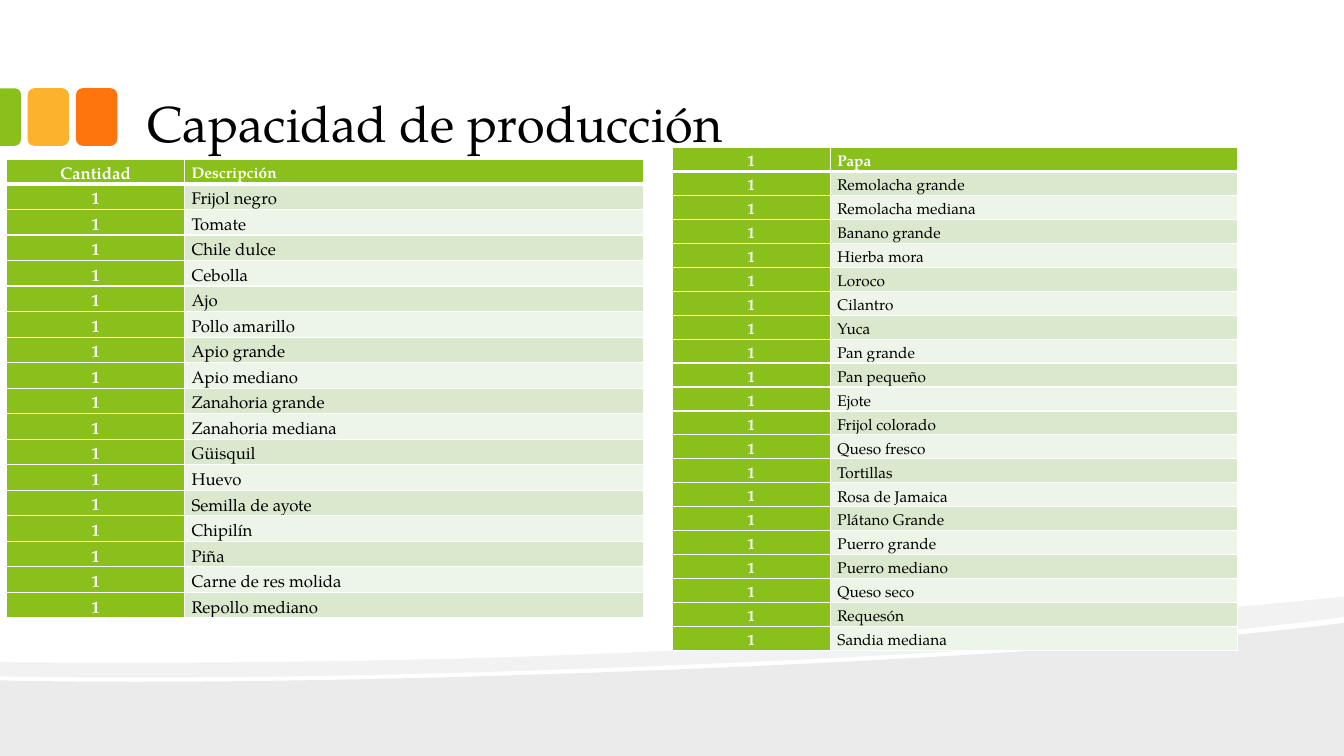
from dataclasses import dataclass

from lxml.etree import SubElement
from pptx import Presentation
from pptx.dml.color import RGBColor
from pptx.enum.shapes import MSO_SHAPE as Shape
from pptx.enum.text import MSO_ANCHOR as Anchor, MSO_AUTO_SIZE as AutoSize, PP_ALIGN as Align
from pptx.oxml.ns import qn
from pptx.util import Emu, Inches, Pt

WIDTH, HEIGHT = Inches(13.33), Inches(7.5)
FONT = "TeX Gyre Pagella"
GREEN, YELLOW, ORANGE = "89C01C", "FCB22C", "FE750E"
WHITE, BLACK = "FFFFFF", "000000"
BANDS = ("DAE8CD", "EDF4E8")
Point = tuple[float, float]


# Lengths are percentages of the slide's width and height
def across(share: float) -> Emu:
    return Emu(round(WIDTH * share / 100))


def down(share: float) -> Emu:
    return Emu(round(HEIGHT * share / 100))


@dataclass
class Tile:
    left: float
    top: float
    width: float
    height: float
    color: str
    kind: Shape = Shape.ROUNDED_RECTANGLE
    rotation: int = 0


@dataclass
class Wave:
    start: Point
    segments: list[tuple[Point, ...]]  # one point is a line, three are a Bézier curve
    opacity: int


@dataclass
class ProductTable:
    left: float
    top: float
    columns: tuple[float, float]
    row: float
    height: float
    header: tuple[str, str]
    header_sizes: tuple[int, int]
    size: int
    products: list[str]


TILES = [
    Tile(5.65, 11.67, 3.08, 7.63, ORANGE),
    Tile(2.05, 11.67, 3.08, 7.63, YELLOW),
    Tile(-1.37, 14.08, 4.28, 2.8, GREEN, Shape.ROUND_2_SAME_RECTANGLE, 90),
]

WAVES = [
    Wave((100, 82.4), [((100, 100),), ((0, 100),), ((0, 90),),
                       ((26.41, 91.07), (78.17, 87.33), (100, 82.4))], 8),
    Wave((100, 78.93), [((100, 81.6),),
                        ((94.15, 83.07), (86.2, 84.4), (77.19, 85.47)),
                        ((52.36, 88.4), (19.35, 90.27), (0, 89.47)),
                        ((0, 87.6),),
                        ((48.91, 88.27), (72.84, 83.6), (100, 78.93))], 5),
]

TABLES = [
    ProductTable(0.48, 21.07, (13.25, 34.13), 2.35, 72, ("Cantidad", "Descripción"), (12, 11), 12, [
        "Frijol negro", "Tomate", "Chile dulce", "Cebolla", "Ajo", "Pollo amarillo",
        "Apio grande", "Apio mediano", "Zanahoria grande", "Zanahoria mediana",
        "Güisquil", "Huevo", "Semilla de ayote", "Chipilín", "Piña",
        "Carne de res molida", "Repollo mediano"]),
    ProductTable(50.01, 19.54, (11.78, 30.31), 3.17, 77.07, ("1", "Papa"), (11, 11), 11, [
        "Remolacha grande", "Remolacha mediana", "Banano grande", "Hierba mora", "Loroco",
        "Cilantro", "Yuca", "Pan grande", "Pan pequeño", "Ejote", "Frijol colorado",
        "Queso fresco", "Tortillas", "Rosa de Jamaica", "Plátano Grande", "Puerro grande",
        "Puerro mediano", "Queso seco", "Requesón", "Sandia mediana"]),
]


def rgb(color: str) -> RGBColor:
    return RGBColor.from_string(color)


def paint(shape, color: str) -> None:
    shape.shadow.inherit = False
    shape.fill.solid()
    shape.fill.fore_color.rgb = rgb(color)
    shape.line.fill.background()


def write(frame, text: str, *, size: int, color: str, bold: bool = False,
          align: Align = Align.LEFT, spacing: float = 1.0) -> None:
    paragraph = frame.paragraphs[0]
    paragraph.alignment = align
    paragraph.line_spacing = spacing
    run = paragraph.add_run()
    run.text = text
    run.font.name, run.font.size, run.font.bold = FONT, Pt(size), bold
    run.font.color.rgb = rgb(color)


def bend(shape, segments: list[tuple[Point, ...]]) -> None:
    """Merge the three lines of each curved segment into one Bézier curve."""
    lines = iter(list(shape._element.iter(qn("a:lnTo"))))
    for segment in segments:
        parts = [next(lines) for _ in segment]
        if len(parts) == 3:
            curve = SubElement(parts[0].getparent(), qn("a:cubicBezTo"))
            parts[0].addprevious(curve)
            for part in parts:
                curve.append(part[0])
                part.getparent().remove(part)


def add_wave(slide, wave: Wave) -> None:
    points = [wave.start, *(point for segment in wave.segments for point in segment)]
    outline = [(across(x), down(y)) for x, y in points]
    builder = slide.shapes.build_freeform(*outline[0])
    builder.add_line_segments(outline[1:], close=True)
    shape = builder.convert_to_shape()
    bend(shape, wave.segments)
    paint(shape, BLACK)
    color = shape._element.spPr.find(f"{qn('a:solidFill')}/{qn('a:srgbClr')}")
    SubElement(color, qn("a:alpha"), val=str(wave.opacity * 1000))


def add_tile(slide, tile: Tile) -> None:
    shape = slide.shapes.add_shape(tile.kind, across(tile.left), down(tile.top),
                                   across(tile.width), down(tile.height))
    shape.rotation = tile.rotation
    if tile.rotation:
        shape.adjustments[0] = 0.29
    paint(shape, tile.color)


def add_borders(cell, row: int) -> None:
    properties = cell._tc.get_or_add_tcPr()
    widths = {"L": 1, "R": 1, "T": 3 if row == 1 else 1, "B": 3 if row == 0 else 1}
    for side, width in widths.items():
        line = SubElement(properties, qn(f"a:ln{side}"), w=str(Pt(width)))
        SubElement(SubElement(line, qn("a:solidFill")), qn("a:srgbClr"), val=WHITE)


def add_product_table(slide, spec: ProductTable) -> None:
    rows = [spec.header] + [("1", product) for product in spec.products]
    graphic = slide.shapes.add_table(len(rows), 2, across(spec.left), down(spec.top),
                                     across(sum(spec.columns)), down(spec.height))
    table = graphic.table
    for column, width in zip(table.columns, spec.columns):
        column.width = across(width)
    for i, texts in enumerate(rows):
        table.rows[i].height = down(spec.row)
        for j, text in enumerate(texts):
            cell = table.cell(i, j)
            strong = i == 0 or j == 0
            add_borders(cell, i)
            cell.fill.solid()
            cell.fill.fore_color.rgb = rgb(GREEN if strong else BANDS[(i - 1) % 2])
            cell.margin_left = cell.margin_right = Inches(0.07)
            cell.margin_top = cell.margin_bottom = 0
            cell.vertical_anchor = Anchor.MIDDLE
            write(cell.text_frame, text, size=spec.size if i else spec.header_sizes[j],
                  color=WHITE if strong else BLACK, bold=strong,
                  align=Align.LEFT if j else Align.CENTER, spacing=1.5)
    graphic.height = down(spec.height)


def add_title(slide, text: str) -> None:
    title = slide.shapes.title
    title.left, title.top = across(9.98), down(2.2)
    title.width, title.height = across(79.97), down(18.93)
    frame = title.text_frame
    frame.auto_size, frame.word_wrap = AutoSize.NONE, True
    frame.vertical_anchor = Anchor.BOTTOM
    frame.margin_left = frame.margin_right = Inches(0.13)
    frame.margin_top = frame.margin_bottom = Inches(0.07)
    write(frame, text, size=36, color=BLACK)


def main() -> None:
    presentation = Presentation()
    presentation.slide_width, presentation.slide_height = WIDTH, HEIGHT
    slide = presentation.slides.add_slide(presentation.slide_layouts.get_by_name("Title Only"))
    # Background and corner decoration
    for wave in WAVES:
        add_wave(slide, wave)
    for tile in TILES:
        add_tile(slide, tile)
    # Content
    add_title(slide, "Capacidad de producción")
    for spec in TABLES:
        add_product_table(slide, spec)
    presentation.save("out.pptx")


if __name__ == "__main__":
    main()
